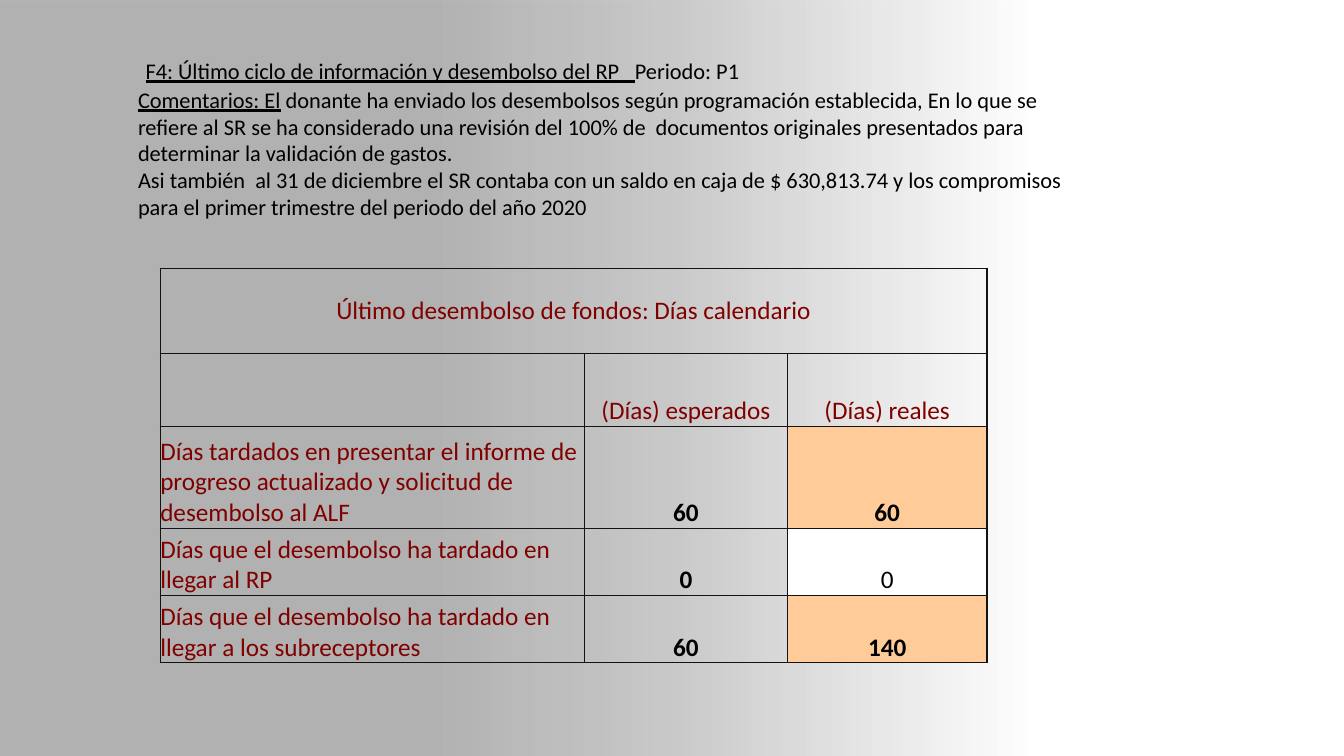
from lxml.etree import SubElement
from pptx import Presentation
from pptx.dml.color import RGBColor
from pptx.enum.shapes import MSO_SHAPE
from pptx.enum.text import MSO_ANCHOR, PP_ALIGN
from pptx.oxml import parse_xml
from pptx.oxml.ns import nsdecls, qn
from pptx.util import Pt

BLACK = RGBColor(0, 0, 0)
WHITE = RGBColor(0xFF, 0xFF, 0xFF)
MAROON = RGBColor(0x80, 0, 0)
PEACH = RGBColor(0xFF, 0xCC, 0x99)
EDGE = RGBColor(0x13, 0x13, 0x12)


def add_panel(width):
    panel = slide.shapes.add_shape(MSO_SHAPE.RECTANGLE, 0, 0, Pt(width), Pt(540))
    panel.shadow.inherit = False
    panel.line.fill.background()
    panel.fill.solid()
    panel.fill.fore_color.rgb = WHITE
    return panel


def add_edge(props, side, width):
    line = SubElement(props, qn(f"a:ln{side}"), w=str(Pt(width)))
    fill = SubElement(line, qn("a:solidFill"))
    SubElement(fill, qn("a:srgbClr"), val=str(EDGE))


deck = Presentation()
deck.slide_width, deck.slide_height = Pt(960), Pt(540)
slide = deck.slides.add_slide(deck.slide_layouts[6])

# Background: white, with a grey shade that fades out to the right
add_panel(960)
shade = add_panel(735)
stops = "".join(
    f'<a:gs pos="{pos * 1000}"><a:srgbClr val="{BLACK}">'
    f'<a:alpha val="{alpha * 1000}"/></a:srgbClr></a:gs>'
    for pos, alpha in [(0, 0), (33, 20), (58, 30), (100, 30)]
)
solid = shade.fill._xPr.find(qn("a:solidFill"))
solid.getparent().replace(solid, parse_xml(
    f'<a:gradFill {nsdecls("a")} rotWithShape="1"><a:gsLst>{stops}</a:gsLst>'
    '<a:lin ang="10800000" scaled="0"/></a:gradFill>'))

# Comments: each run is (text, size, underlined)
notes = [
    [(" ", 24, False),
     ("F4: Último ciclo de información y desembolso del RP   ", 16, True),
     ("Periodo: P1", 16, False)],
    [("Comentarios: El", 16, True),
     (" donante ha enviado los desembolsos según programación establecida, "
      "En lo que se refiere al SR se ha considerado una revisión del 100% de  "
      "documentos originales presentados para determinar la validación de gastos.",
      16, False)],
    [("Asi también  al 31 de diciembre el SR contaba con un saldo en caja de "
      "$ 630,813.74 y los compromisos para el primer trimestre del periodo "
      "del año 2020", 16, False)],
]
frame = slide.shapes.add_textbox(Pt(91.5), Pt(29), Pt(677.5), Pt(133)).text_frame
frame.word_wrap = True
for i, parts in enumerate(notes):
    para = frame.add_paragraph() if i else frame.paragraphs[0]
    for text, size, under in parts:
        run = para.add_run()
        run.text = text
        run.font.name, run.font.size = "Calibri", Pt(size)
        run.font.underline = under
        run.font.color.rgb = BLACK

# Table of days
rows = [
    ("Último desembolso de fondos: Días calendario", "", ""),
    ("", "(Días) esperados", "(Días) reales"),
    ("Días tardados en presentar el informe de progreso actualizado y "
     "solicitud de desembolso al ALF", "60", "60"),
    ("Días que el desembolso ha tardado en llegar al RP", "0", "0"),
    ("Días que el desembolso ha tardado en llegar a los subreceptores", "60", "140"),
]
widths = [303, 145, 142.5]
heights = [61, 52, 73, 48, 48]
fills = {(2, 2): PEACH, (3, 2): WHITE, (4, 2): PEACH}
table = slide.shapes.add_table(
    5, 3, Pt(114.5), Pt(191.5), Pt(sum(widths)), Pt(sum(heights))).table
table.first_row = table.horz_banding = False
for col, width in zip(table.columns, widths):
    col.width = Pt(width)
for row, height in zip(table.rows, heights):
    row.height = Pt(height)
table.cell(0, 0).merge(table.cell(0, 2))

for r, texts in enumerate(rows):
    for c, text in enumerate(texts):
        cell = table.cell(r, c)
        cell.margin_left = cell.margin_right = 0
        cell.margin_top = cell.margin_bottom = 0
        cell.vertical_anchor = MSO_ANCHOR.BOTTOM if r else MSO_ANCHOR.MIDDLE
        props = cell._tc.get_or_add_tcPr()
        add_edge(props, "L", 1 if c < 2 else 0.5)
        add_edge(props, "R", 0.5 if c == 1 else 1)
        add_edge(props, "T", 1 if r < 2 else 0.5)
        add_edge(props, "B", 1 if r in (0, 4) else 0.5)
        if (r, c) in fills:
            cell.fill.solid()
            cell.fill.fore_color.rgb = fills[r, c]
        else:
            cell.fill.background()
        cell.text_frame.text = text
        para = cell.text_frame.paragraphs[0]
        value = r > 1 and c > 0
        para.alignment = PP_ALIGN.CENTER if value or r < 2 else PP_ALIGN.LEFT
        for run in para.runs:
            run.font.name, run.font.size = "Calibri", Pt(18)
            run.font.bold = value and (r, c) != (3, 2)
            run.font.color.rgb = BLACK if value else MAROON

deck.save("out.pptx")
